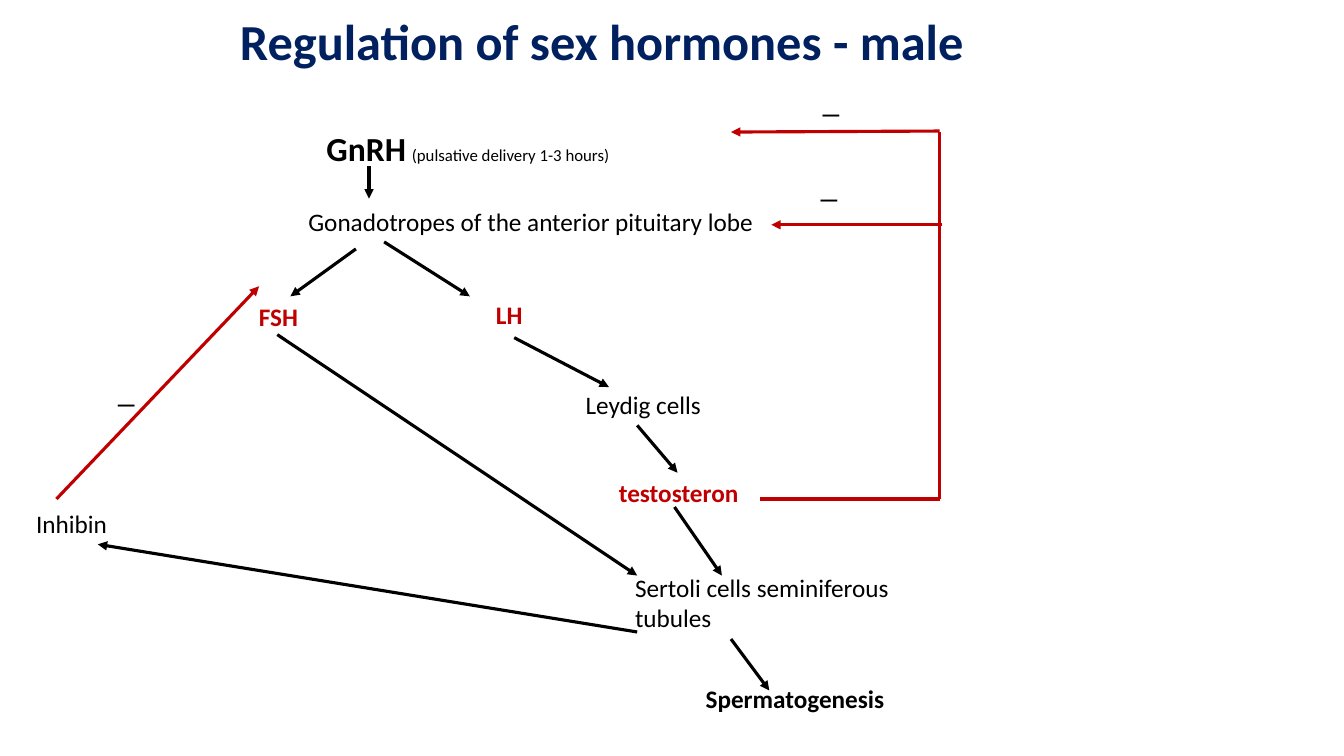
from lxml.etree import SubElement
from pptx import Presentation
from pptx.dml.color import RGBColor
from pptx.enum.shapes import MSO_CONNECTOR as Conn
from pptx.enum.text import MSO_ANCHOR as Anchor, MSO_AUTO_SIZE as Auto, PP_ALIGN as Align
from pptx.oxml.ns import qn
from pptx.util import Inches, Pt

NAVY = RGBColor(0x00, 0x20, 0x60)
BLACK = RGBColor(0x00, 0x00, 0x00)
RED = RGBColor(0xC0, 0x00, 0x00)


class Diagram:
    font = "Calibri"
    columns, rows = 133.3, 75
    line_width = Pt(2.25)

    def __init__(self, prs):
        self.cell_w = prs.slide_width / self.columns
        self.cell_h = prs.slide_height / self.rows
        self.s = prs.slides.add_slide(prs.slide_layouts[5])

    def x(self, column):
        return round(column * self.cell_w)

    def y(self, row):
        return round(row * self.cell_h)

    def box(self, left, top, width, height):
        return self.x(left), self.y(top), self.x(width), self.y(height)

    def run(self, p, text, **style):
        r = p.add_run()
        r.text = text
        style = {"name": self.font, "size": 18, "bold": False, "color": BLACK} | style
        r.font.color.rgb = style.pop("color")
        style["size"] = Pt(style["size"])
        for key, value in style.items():
            setattr(r.font, key, value)

    def title(self, area, text):
        sp = self.s.shapes.title
        for key, value in zip(("left", "top", "width", "height"), self.box(*area)):
            setattr(sp, key, value)
        tf = sp.text_frame
        for key, value in {"word_wrap": True, "auto_size": Auto.NONE,
                           "vertical_anchor": Anchor.MIDDLE}.items():
            setattr(tf, key, value)
        p = tf.paragraphs[0]
        p.alignment, p.line_spacing = Align.LEFT, 0.9
        self.run(p, text, size=36, bold=True, color=NAVY)

    def label(self, area, *runs):
        tf = self.s.shapes.add_textbox(*self.box(*area)).text_frame
        tf.word_wrap = True
        tf.auto_size = Auto.SHAPE_TO_FIT_TEXT
        for text, style in runs:
            self.run(tf.paragraphs[0], text, **style)

    def line(self, x1, y1, x2, y2, color=BLACK, arrow=True):
        sp = self.s.shapes.add_connector(
            Conn.STRAIGHT, self.x(x1), self.y(y1), self.x(x2), self.y(y2))
        sp.line.color.rgb = color
        sp.line.width = self.line_width
        if arrow:
            SubElement(sp.line._get_or_add_ln(), qn("a:tailEnd"), type="triangle")
        SubElement(sp._element.spPr, qn("a:effectLst"))


def main():
    prs = Presentation()
    prs.slide_width, prs.slide_height = Inches(13.33), Inches(7.5)
    d = Diagram(prs)
    d.title((22.8, 0, 110.5, 8.8), "Regulation of sex hormones - male")

    d.label((31.4, 12.2, 30.3, 5), ("GnRH", {"size": 24, "bold": True}),
            (" ", {}), ("(pulsative delivery 1-3 hours)", {"size": 12}))

    hormone = {"bold": True, "color": RED}
    for left, top, width, height, text, style in (
        (29.6, 20, 48.1, 4, "Gonadotropes of the anterior pituitary lobe", {}),
        (24.7, 29.4, 13.3, 4, "FSH", hormone),
        (48.2, 29.2, 17.8, 4, "LH", hormone),
        (57.1, 38.1, 20.3, 4, "Leydig cells", {}),
        (60.4, 46.9, 20.6, 4, "testosteron", hormone),
        (62, 56.3, 28.7, 7.1, "Sertoli cells seminiferous tubules", {}),
        (69, 67.3, 35.2, 4, "Spermatogenesis", {"bold": True}),
        (2.6, 49.9, 14.3, 4, "Inhibin", {}),
    ):
        d.label((left, top, width, height), (text, style))

    for ends in (
        (36.6, 16.5, 36.6, 19.7),
        (38.1, 24, 46.6, 29.4),
        (35.3, 24.7, 28.8, 29.4),
        (51, 33.5, 60.4, 38.4),
        (63.2, 42.2, 67.2, 46.9),
        (66.9, 50.3, 71.6, 57.1),
        (72.5, 63.4, 76.3, 68.5),
        (27.5, 33.2, 63.2, 57.1),
        (63.2, 62.7, 9.7, 54),
    ):
        d.line(*ends)

    for *ends, arrow in (
        (5.6, 49.5, 25.7, 28.4, True),
        (75.4, 49.5, 93.2, 49.5, False),
        (93.2, 49.5, 93.2, 13.1, False),
        (93.2, 13, 72.5, 13.1, True),
        (93.4, 22.3, 76.5, 22.3, True),
    ):
        d.line(*ends, color=RED, arrow=arrow)

    for left, top in ((10.7, 36.1), (80.4, 15.8), (80.6, 7.3)):
        d.label((left, top, 7.5, 5), ("_", {"size": 24}))

    prs.save("out.pptx")


if __name__ == "__main__":
    main()
